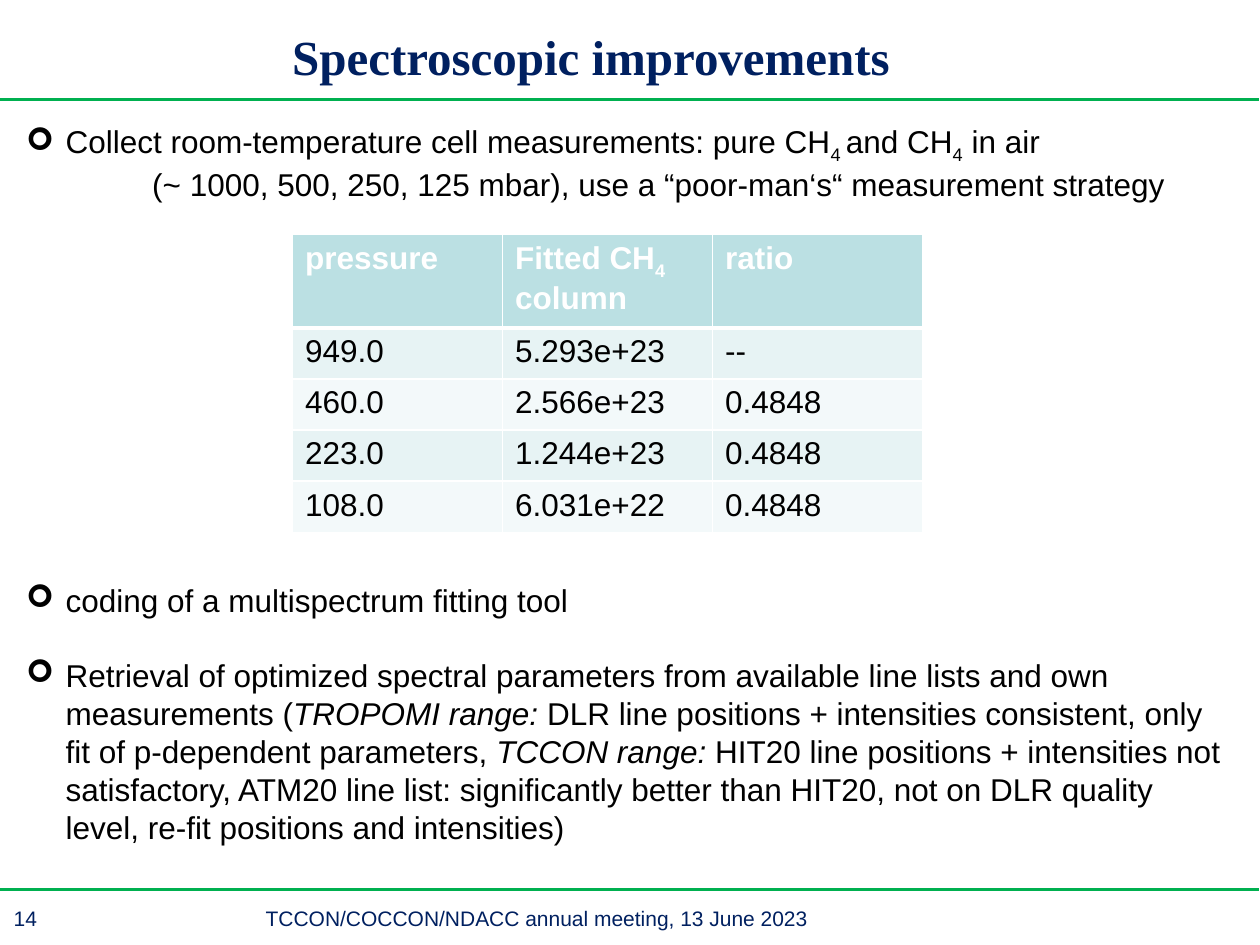
from lxml.etree import SubElement
from pptx import Presentation
from pptx.dml.color import RGBColor
from pptx.enum.shapes import MSO_CONNECTOR
from pptx.enum.text import MSO_ANCHOR, PP_ALIGN
from pptx.oxml.ns import qn
from pptx.util import Pt

NAVY, GREEN, BLACK, WHITE = "002060", "00B050", "000000", "FFFFFF"
HEADER_FILL, BAND_FILLS = "BBE0E3", ("E7F3F4", "F3F9FA")


def color(hex_code):
    return RGBColor.from_string(hex_code)


def write(paragraph, text, size=18, font="Arial", ink=BLACK, bold=False,
          italic=False, subscript=False):
    """Append one formatted run to the paragraph."""
    run = paragraph.add_run()
    run.text = text
    run.font.size = Pt(size)
    run.font.name = font
    run.font.bold = bold
    run.font.italic = italic
    run.font.color.rgb = color(ink)
    if subscript:
        run._r.get_or_add_rPr().set("baseline", "-25000")


def write_parts(paragraph, parts, **style):
    """Write parts that are plain strings or (text, extra format) pairs."""
    for part in parts:
        text, extra = (part, {}) if isinstance(part, str) else part
        write(paragraph, text, **style, **extra)


def indent(paragraph, left, bullet=None):
    properties = paragraph._p.get_or_add_pPr()
    properties.set("marL", str(Pt(left)))
    if bullet:
        properties.set("indent", str(-Pt(left)))
        SubElement(properties, qn("a:buFont"), typeface="Wingdings")
        SubElement(properties, qn("a:buChar"), char=bullet)


def add_tab_stop(paragraph, position):
    stops = SubElement(paragraph._p.get_or_add_pPr(), qn("a:tabLst"))
    SubElement(stops, qn("a:tab"), pos=str(Pt(position)), algn="l")


def draw_borders(cell, bottom):
    properties = cell._tc.get_or_add_tcPr()
    widths = {"a:lnL": 1, "a:lnR": 1, "a:lnT": 1, "a:lnB": bottom}
    for position, (side, width) in enumerate(widths.items()):
        border = SubElement(properties, qn(side), w=str(Pt(width)))
        fill = SubElement(border, qn("a:solidFill"))
        SubElement(fill, qn("a:srgbClr"), val=WHITE)
        properties.insert(position, border)


class SlideBuilder:
    """Holds the current slide and draws its elements, in points."""

    def __init__(self, slide):
        self.slide = slide

    def rule(self, y):
        line = self.slide.shapes.add_connector(
            MSO_CONNECTOR.STRAIGHT, Pt(-2), Pt(y), Pt(719.3), Pt(y))
        line.line.color.rgb = color(GREEN)
        line.line.width = Pt(2)
        SubElement(line._element.spPr, qn("a:effectLst"))

    def text_frame(self, left, top, width, height, anchor=MSO_ANCHOR.TOP):
        box = self.slide.shapes.add_textbox(Pt(left), Pt(top), Pt(width), Pt(height))
        frame = box.text_frame
        frame.word_wrap = True
        frame.vertical_anchor = anchor
        return frame

    def title(self, text):
        frame = self.text_frame(20.2, 9.4, 635, 45.4, MSO_ANCHOR.MIDDLE)
        heading = frame.paragraphs[0]
        heading.alignment = PP_ALIGN.CENTER
        write(heading, text, size=28, font="Times New Roman", ink=NAVY, bold=True)

    def footer(self, number, text):
        line = self.text_frame(0.7, 514.1, 716.4, 21.6).paragraphs[0]
        add_tab_stop(line, 144)
        write(line, f"{number}\t{text}", size=12, ink=NAVY)

    def body(self, items):
        """Write items of (space before, left indent, bullet, parts)."""
        frame = self.text_frame(7.9, 66.2, 697.7, 422)
        for position, (space, left, bullet, parts) in enumerate(items):
            paragraph = frame.add_paragraph() if position else frame.paragraphs[0]
            indent(paragraph, left, bullet)
            if space:
                paragraph.space_before = Pt(space)
            write_parts(paragraph, parts)

    def table(self, rows):
        columns, row_height, header_height = len(rows[0]), 29.2, 51.5
        height = header_height + row_height * (len(rows) - 1)
        table = self.slide.shapes.add_table(
            len(rows), columns, Pt(167.2), Pt(134), Pt(360), Pt(height)).table
        for y, row in enumerate(rows):
            header = y == 0
            table.rows[y].height = Pt(header_height if header else row_height)
            for x, parts in enumerate(row):
                cell = table.cell(y, x)
                cell.fill.solid()
                cell.fill.fore_color.rgb = color(
                    HEADER_FILL if header else BAND_FILLS[(y - 1) % 2])
                draw_borders(cell, bottom=3 if header else 1)
                write_parts(cell.text_frame.paragraphs[0], parts,
                            ink=WHITE if header else BLACK, bold=header)


def main():
    deck = Presentation()
    deck.slide_width, deck.slide_height = Pt(720), Pt(540)
    page = SlideBuilder(deck.slides.add_slide(deck.slide_layouts[6]))
    low, slanted = {"subscript": True}, {"italic": True}

    for y in (508.3, 56.9):
        page.rule(y)
    page.footer(14, "TCCON/COCCON/NDACC annual meeting, 13 June 2023")
    page.title("Spectroscopic improvements")
    page.body([
        (0, 22.5, "➢", ["Collect room-temperature cell measurements: pure CH",
                        ("4 ", low), "and CH", ("4", low), " in air"]),
        (0, 72, None, ["(~ 1000, 500, 250, 125 mbar), use a “poor-man‘s“ "
                       "measurement strategy"]),
        (216, 22.5, "➢", ["coding of a multispectrum fitting tool"]),
        (21.6, 22.5, "➢", [
            "Retrieval of optimized spectral parameters from available line lists "
            "and own measurements (",
            ("TROPOMI range: ", slanted),
            "DLR line positions + intensities consistent, only fit of p-dependent "
            "parameters, ",
            ("TCCON range: ", slanted),
            "HIT20 line positions + intensities not satisfactory, ATM20 line list: "
            "significantly better than HIT20, not on DLR quality level, re-fit "
            "positions and intensities)"]),
    ])
    page.table([
        [["pressure"], ["Fitted CH", ("4 ", low), "column"], ["ratio"]],
        [["949.0"], ["5.293e+23"], ["--"]],
        [["460.0"], ["2.566e+23"], ["0.4848"]],
        [["223.0"], ["1.244e+23"], ["0.4848"]],
        [["108.0"], ["6.031e+22"], ["0.4848"]],
    ])
    deck.save("out.pptx")


if __name__ == "__main__":
    main()
